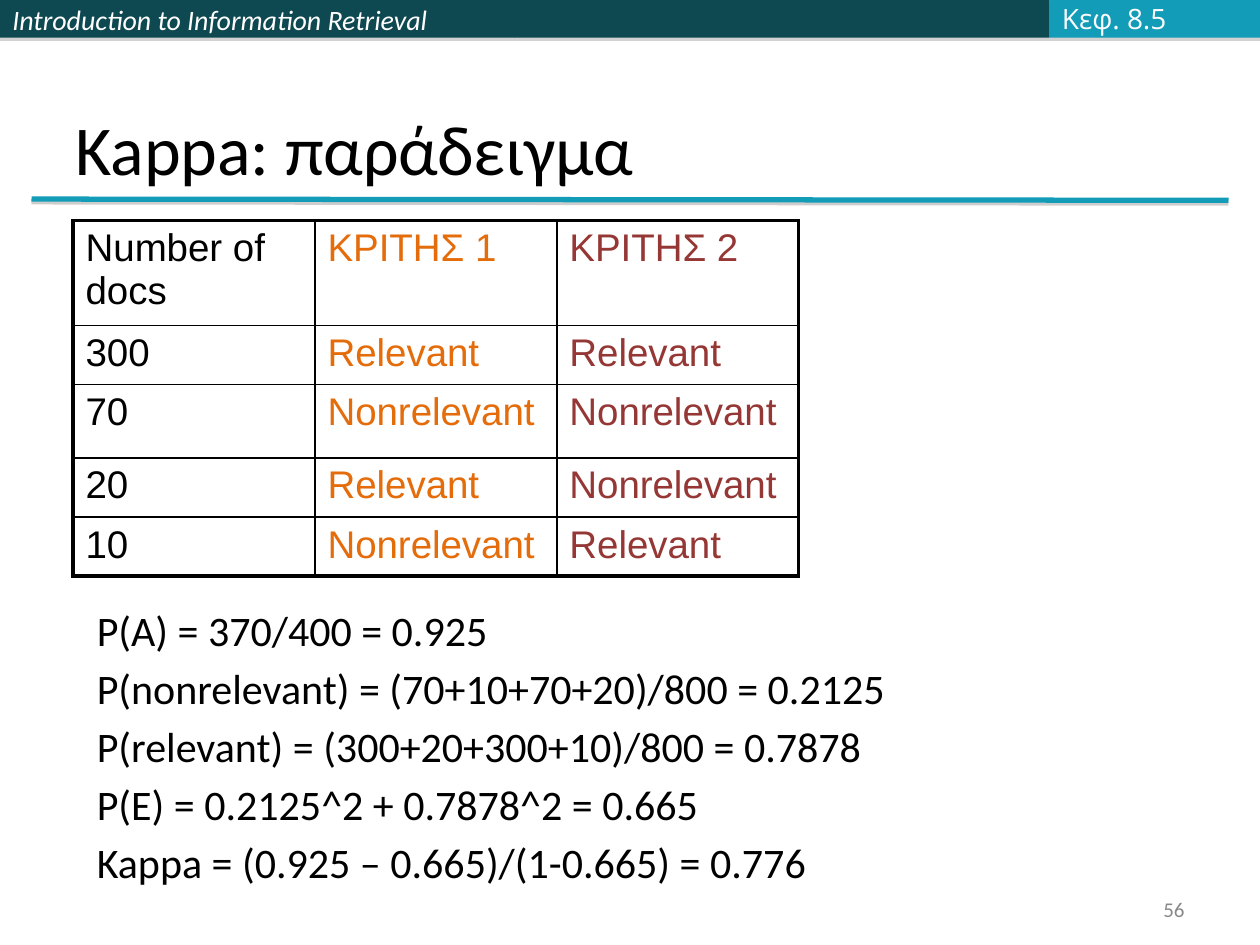
from typing import NamedTuple, Optional

from lxml.etree import SubElement
from pptx import Presentation
from pptx.dml.color import RGBColor
from pptx.enum.shapes import MSO_CONNECTOR, MSO_SHAPE
from pptx.enum.text import MSO_ANCHOR, PP_ALIGN
from pptx.oxml.ns import qn
from pptx.util import Inches, Pt

BLACK = RGBColor(0x00, 0x00, 0x00)
WHITE = RGBColor(0xFF, 0xFF, 0xFF)
OFF_WHITE = RGBColor(0xFB, 0xFC, 0xFF)
GRAY = RGBColor(0x89, 0x89, 0x89)
DARK_TEAL = RGBColor(0x0E, 0x48, 0x51)
TEAL = RGBColor(0x13, 0x9C, 0xB7)
ORANGE = RGBColor(0xE4, 0x6C, 0x0A)
RED = RGBColor(0x95, 0x37, 0x35)

THIN, THICK = 1, 2.25


class Style(NamedTuple):
    size: float
    color: RGBColor
    font: str = "Calibri"
    italic: bool = False


class Bar(NamedTuple):
    left: float
    width: float
    color: RGBColor


class TextBlock(NamedTuple):
    left: float
    top: float
    width: float
    height: float
    lines: list[str]
    style: Style
    anchor: MSO_ANCHOR = MSO_ANCHOR.MIDDLE
    align: PP_ALIGN = PP_ALIGN.LEFT
    wrap: bool = True
    space_before: Optional[float] = None


BARS = [Bar(0, 4.08, DARK_TEAL), Bar(4.08, 4.25, DARK_TEAL), Bar(8.33, 1.67, TEAL)]

FORMULAS = [
    "P(A) = 370/400 = 0.925",
    "P(nonrelevant) = (70+10+70+20)/800 = 0.2125",
    "P(relevant) = (300+20+300+10)/800 = 0.7878",
    "P(E) = 0.2125^2 + 0.7878^2 = 0.665",
    "Kappa = (0.925 – 0.665)/(1-0.665) = 0.776",
]

TEXT_BLOCKS = [
    TextBlock(0, 0, 4.08, 0.3, ["Introduction to Information Retrieval"],
              Style(16, WHITE, italic=True)),
    TextBlock(8.33, -0.04, 1.1, 0.37, ["Κεφ. 8.5"],
              Style(16, OFF_WHITE, "Open Sans"), wrap=False),
    TextBlock(0.5, 0.3, 9, 1.25, ["Kappa: παράδειγμα"],
              Style(40, BLACK), MSO_ANCHOR.BOTTOM),
    TextBlock(0.67, 4.75, 8.73, 2.42, FORMULAS,
              Style(24, BLACK), MSO_ANCHOR.TOP, space_before=4.3),
    TextBlock(7.17, 7.08, 2.33, 0.27, ["56"], Style(12, GRAY), align=PP_ALIGN.RIGHT),
]

JUDGEMENTS = [
    ["Number of docs", "ΚΡΙΤΗΣ 1", "ΚΡΙΤΗΣ 2"],
    ["300", "Relevant", "Relevant"],
    ["70", "Nonrelevant", "Nonrelevant"],
    ["20", "Relevant", "Nonrelevant"],
    ["10", "Nonrelevant", "Relevant"],
]
COLUMN_COLORS = [BLACK, ORANGE, RED]
COLUMN_WIDTH = 1.92
ROW_HEIGHTS = [0.83, 0.47, 0.58, 0.47, 0.47]


def add_span(para, text: str, style: Style) -> None:
    span = para.add_run()
    span.text = text
    span.font.name = style.font
    span.font.size = Pt(style.size)
    span.font.italic = style.italic
    span.font.color.rgb = style.color


def add_shadow(shape, distance: float, opacity: int) -> None:
    effects = SubElement(shape._element.spPr, qn("a:effectLst"))
    shadow = SubElement(effects, qn("a:outerShdw"), blurRad="0",
                        dist=str(Pt(distance)), dir="5400000", rotWithShape="0")
    color = SubElement(shadow, qn("a:srgbClr"), val="808080")
    SubElement(color, qn("a:alpha"), val=str(opacity * 1000))


def add_bar(page, bar: Bar) -> None:
    shape = page.shapes.add_shape(MSO_SHAPE.RECTANGLE, Inches(bar.left), 0,
                                  Inches(bar.width), Inches(0.3))
    shape.fill.solid()
    shape.fill.fore_color.rgb = bar.color
    shape.line.fill.background()
    add_shadow(shape, 1.8, 35)


def add_title_rule(page) -> None:
    rule = page.shapes.add_connector(MSO_CONNECTOR.STRAIGHT, Inches(0.25), Inches(1.58),
                                     Inches(9.75), Inches(1.59))
    rule.line.color.rgb = TEAL
    rule.line.width = Pt(3)
    add_shadow(rule, 1.6, 38)


def add_text(page, block: TextBlock) -> None:
    box = page.shapes.add_textbox(Inches(block.left), Inches(block.top),
                                  Inches(block.width), Inches(block.height))
    frame = box.text_frame
    frame.word_wrap = block.wrap
    frame.vertical_anchor = block.anchor
    for index, line in enumerate(block.lines):
        para = frame.add_paragraph() if index else frame.paragraphs[0]
        para.alignment = block.align
        if block.space_before is not None:
            para.space_before = Pt(block.space_before)
        add_span(para, line, block.style)


def set_borders(cell, widths: dict[str, float]) -> None:
    properties = cell._tc.get_or_add_tcPr()
    for position, (side, width) in enumerate(widths.items()):
        line = properties.makeelement(qn(f"a:ln{side}"), {"w": str(Pt(width))})
        fill = SubElement(line, qn("a:solidFill"))
        SubElement(fill, qn("a:srgbClr"), val=str(BLACK))
        properties.insert(position, line)


def add_judgement_table(page) -> None:
    row_count, column_count = len(JUDGEMENTS), len(COLUMN_COLORS)
    frame = page.shapes.add_table(row_count, column_count, Inches(0.58), Inches(1.75),
                                  Inches(COLUMN_WIDTH * column_count),
                                  Inches(sum(ROW_HEIGHTS)))
    table = frame.table
    table.first_row = table.horz_banding = False
    for column in table.columns:
        column.width = Inches(COLUMN_WIDTH)
    for r, (values, height) in enumerate(zip(JUDGEMENTS, ROW_HEIGHTS)):
        table.rows[r].height = Inches(height)
        for c, (value, color) in enumerate(zip(values, COLUMN_COLORS)):
            cell = table.cell(r, c)
            cell.fill.background()
            add_span(cell.text_frame.paragraphs[0], value, Style(22, color, "Arial"))
            # Thick outer frame, thin inner grid
            set_borders(cell, {
                "L": THICK if c == 0 else THIN,
                "R": THICK if c == column_count - 1 else THIN,
                "T": THICK if r == 0 else THIN,
                "B": THICK if r == row_count - 1 else THIN,
            })


def main() -> None:
    deck = Presentation()
    deck.slide_width, deck.slide_height = Inches(10), Inches(7.5)
    page = deck.slides.add_slide(deck.slide_layouts[6])

    # Header band and title rule
    for bar in BARS:
        add_bar(page, bar)
    add_title_rule(page)

    # Header, title, formulas and page number
    for block in TEXT_BLOCKS:
        add_text(page, block)

    # Judges' decisions
    add_judgement_table(page)
    deck.save("out.pptx")


if __name__ == "__main__":
    main()
